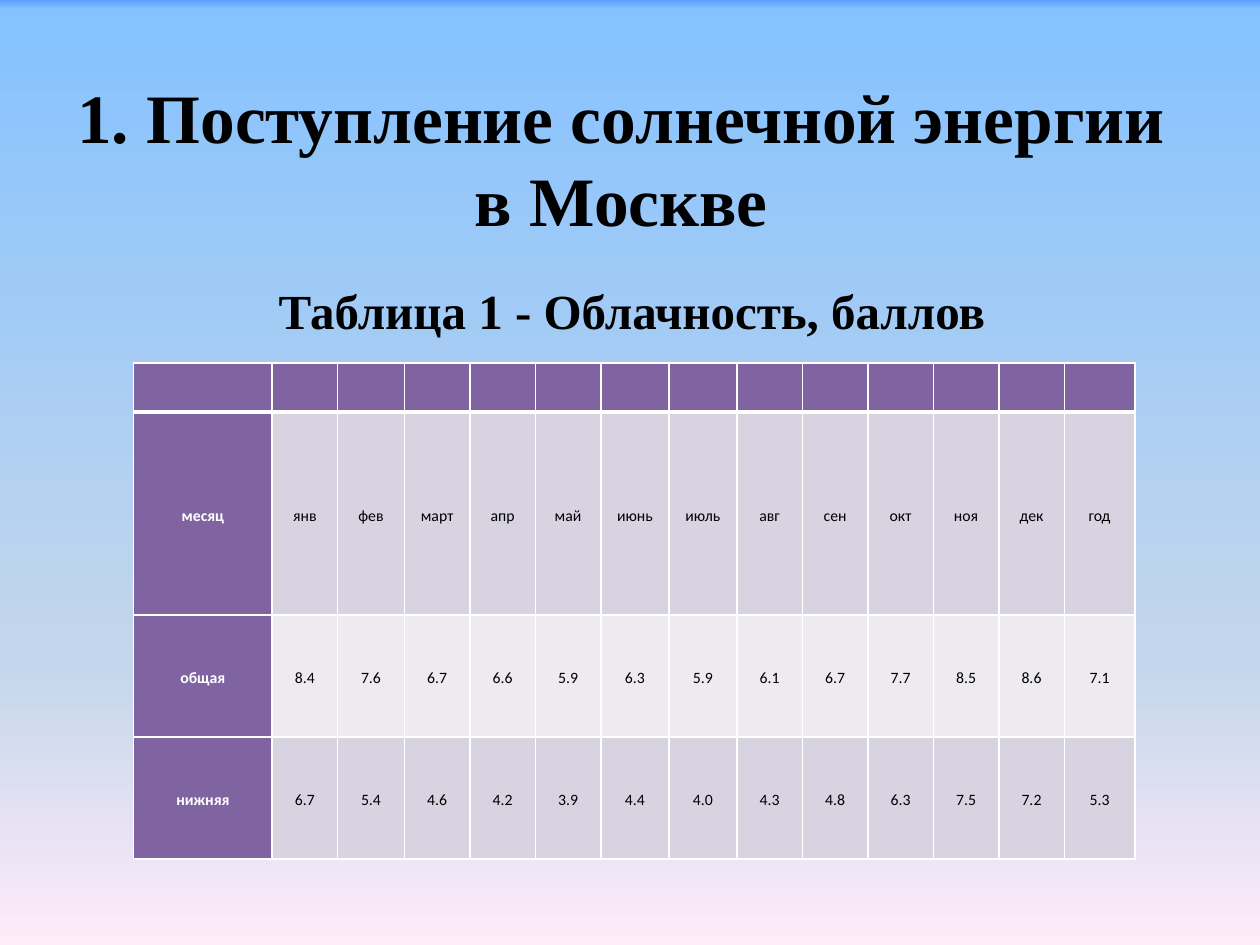
from lxml.etree import SubElement
from pptx import Presentation
from pptx.dml.color import RGBColor
from pptx.enum.text import MSO_ANCHOR, MSO_AUTO_SIZE, PP_ALIGN
from pptx.oxml import parse_xml
from pptx.oxml.ns import nsdecls, qn
from pptx.util import Inches, Pt

# Content
TITLE = "1. Поступление солнечной энергии в Москве"
CAPTION = "Таблица 1 - Облачность, баллов"
ROWS = [
    [""] * 14,
    "месяц янв фев март апр май июнь июль авг сен окт ноя дек год".split(),
    "общая 8.4 7.6 6.7 6.6 5.9 6.3 5.9 6.1 6.7 7.7 8.5 8.6 7.1".split(),
    "нижняя 6.7 5.4 4.6 4.2 3.9 4.4 4.0 4.3 4.8 6.3 7.5 7.2 5.3".split(),
]
WIDTHS = [1.1, 0.52, 0.53, 0.52, 0.52, 0.52, 0.54, 0.54] + [0.52] * 5 + [0.56]
HEIGHTS = [0.39, 1.61, 0.97, 0.97]
COLORS = {"head": "8064A2", "dark": "D8D3E0", "light": "EDEAF0",
          "white": "FFFFFF", "black": "000000"}
SKY = [(0, "5E9EFF"), (1, "85C2FF"), (70, "C4D6EB"), (100, "FFEBFA")]
SERIF, SANS = "Times New Roman", "Calibri"


def put(frame, text, size, font=SERIF, color="black", bold=True, line=None):
    """Write one centred paragraph into a text frame."""
    frame.word_wrap = True
    para = frame.paragraphs[0]
    para.alignment = PP_ALIGN.CENTER
    if line:
        para.line_spacing = Pt(line)
    run = para.add_run()
    run.text = text
    run.font.size, run.font.name, run.font.bold = Pt(size), font, bold
    run.font.color.rgb = RGBColor.from_string(COLORS[color])


def place(shape, left, top, width, height, foot):
    """Set a text shape's box, with room kept free at its foot."""
    shape.left, shape.top = Inches(left), Inches(top)
    shape.width, shape.height = Inches(width), Inches(height)
    frame = shape.text_frame
    frame.auto_size = MSO_AUTO_SIZE.NONE
    frame.vertical_anchor = MSO_ANCHOR.MIDDLE
    frame.margin_bottom = Inches(foot)
    return frame


def edge(cell, top, bottom):
    """Draw white cell borders; top and bottom are widths in points."""
    props = cell._tc.get_or_add_tcPr()
    sides = {"lnL": 1, "lnR": 1, "lnT": top, "lnB": bottom}
    for spot, (tag, width) in enumerate(sides.items()):
        props.insert(spot, parse_xml(
            f'<a:{tag} {nsdecls("a")} w="{Pt(width)}"><a:solidFill>'
            f'<a:srgbClr val="{COLORS["white"]}"/></a:solidFill></a:{tag}>'))


def main():
    deck = Presentation()
    deck.slide_width, deck.slide_height = Inches(10), Inches(7.5)
    slide = deck.slides.add_slide(deck.slide_layouts[5])

    # Sky gradient
    fill = slide.background.fill
    fill.gradient()
    fill.gradient_angle = 270
    stops = next(slide._element.iter(qn("a:gsLst")))
    for stop in list(stops):
        stops.remove(stop)
    for spot, color in SKY:
        stop = SubElement(stops, qn("a:gs"), pos=str(spot * 1000))
        SubElement(stop, qn("a:srgbClr"), val=color)

    # Title
    put(place(slide.shapes.title, 0.43, 0.92, 9, 1.25, 0.65), TITLE, 39.6)

    # Cloud table
    table = slide.shapes.add_table(
        len(ROWS), len(WIDTHS), Inches(1.06), Inches(2.88),
        Inches(sum(WIDTHS)), Inches(sum(HEIGHTS))).table
    for col, width in zip(table.columns, WIDTHS):
        col.width = Inches(width)
    for r, (words, height) in enumerate(zip(ROWS, HEIGHTS)):
        table.rows[r].height = Inches(height)
        for c, word in enumerate(words):
            cell = table.cell(r, c)
            head = r == 0 or c == 0
            tone = "head" if head else "dark" if r % 2 else "light"
            cell.fill.solid()
            cell.fill.fore_color.rgb = RGBColor.from_string(COLORS[tone])
            edge(cell, 3 if r == 1 else 1, 3 if r == 0 else 1)
            cell.vertical_anchor = MSO_ANCHOR.MIDDLE
            pad = Inches(0 if r > 1 and c else 0.03)
            cell.margin_left = cell.margin_right = pad
            cell.margin_top = cell.margin_bottom = pad
            if word:
                put(cell.text_frame, word, 9, font=SANS, bold=head,
                    color="white" if head else "black", line=13.5)

    # Table caption
    box = slide.shapes.add_textbox(0, 0, 0, 0)
    put(place(box, 0.03, 2.14, 9.97, 0.88, 0.29), CAPTION, 28)

    deck.save("out.pptx")


if __name__ == "__main__":
    main()
